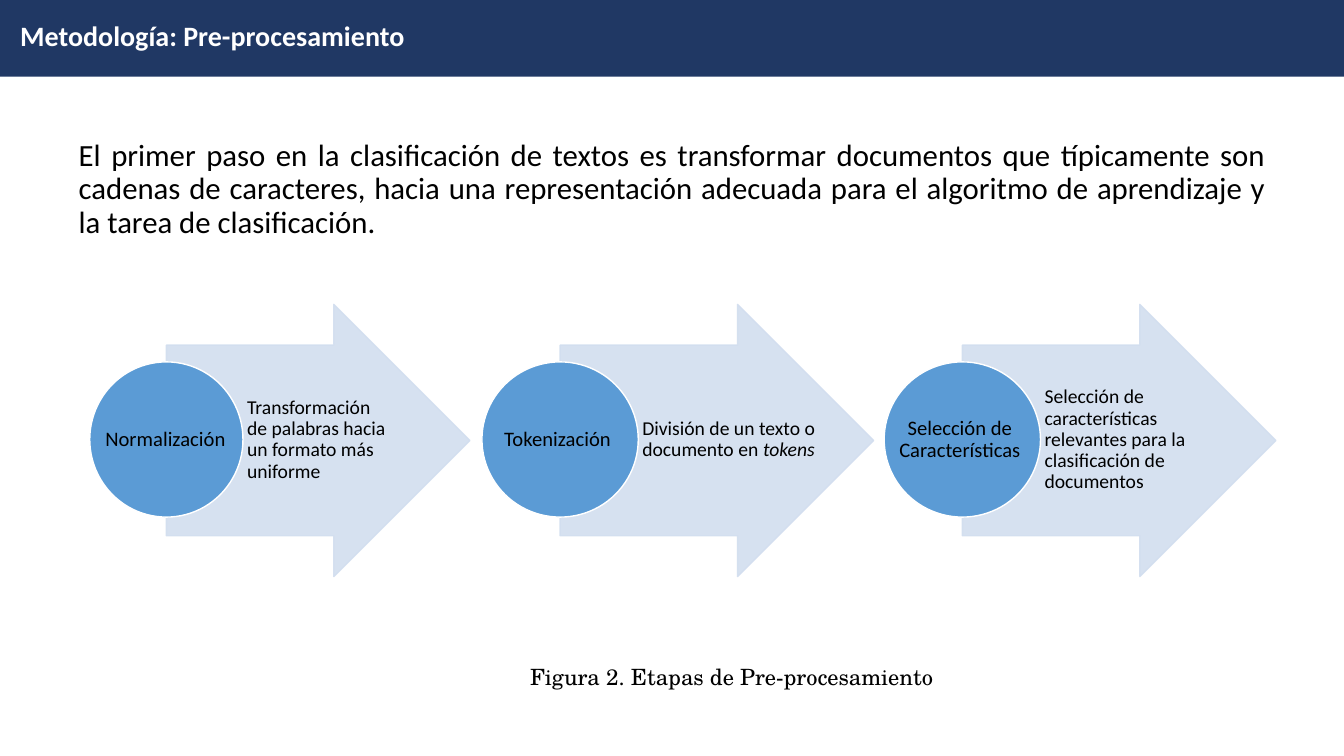
from dataclasses import dataclass

from lxml.etree import SubElement
from pptx import Presentation
from pptx.dml.color import RGBColor
from pptx.enum.shapes import MSO_SHAPE
from pptx.enum.text import MSO_ANCHOR, MSO_AUTO_SIZE, PP_ALIGN
from pptx.oxml.ns import qn
from pptx.util import Inches, Pt


@dataclass(frozen=True)
class Theme:
    navy: str = "203864"
    blue: str = "5B9BD5"
    pale: str = "D2DEEF"
    white: str = "FFFFFF"
    black: str = "000000"
    sans: str = "Calibri"
    serif: str = "TeX Gyre Schola"
    title: float = 20
    body: float = 22
    stage: float = 14.7
    detail: float = 14
    caption: float = 16
    opacity: int = 90


class SlideBuilder:
    def __init__(self, deck, theme):
        self.theme = theme
        self.column = deck.slide_width / 100
        self.row = deck.slide_height / 100
        self.slide = deck.slides.add_slide(deck.slide_layouts[1])

    def box(self, left, top, width, height):
        return (round(left * self.column), round(top * self.row),
                round(width * self.column), round(height * self.row))

    def place(self, holder, area):
        holder.left, holder.top, holder.width, holder.height = self.box(*area)

    def set_text(self, holder, runs, size, color=None, font=None, bold=False,
                 align=PP_ALIGN.LEFT, anchor=MSO_ANCHOR.TOP, spacing=1.0,
                 before=0, indent=0, insets=(0.1, 0.05, 0.1, 0.05)):
        frame = holder.text_frame
        frame.word_wrap = True
        frame.auto_size = MSO_AUTO_SIZE.NONE
        frame.vertical_anchor = anchor
        (frame.margin_left, frame.margin_top,
         frame.margin_right, frame.margin_bottom) = map(Inches, insets)
        paragraph = frame.paragraphs[0]
        paragraph.alignment = align
        paragraph.line_spacing = spacing
        paragraph.space_before = Pt(before)
        properties = paragraph._p.get_or_add_pPr()
        properties.set("marL", str(Inches(indent)))
        properties.set("indent", "0")
        SubElement(properties, qn("a:buNone"))
        for words, italic in runs:
            run = paragraph.add_run()
            run.text = words
            run.font.size = Pt(size)
            run.font.name = font or self.theme.sans
            run.font.bold = bold
            run.font.italic = italic
            run.font.color.rgb = RGBColor.from_string(color or self.theme.black)

    def title(self, area, words):
        heading = self.slide.shapes.title
        self.place(heading, area)
        self.set_text(heading, [(words, False)], self.theme.title,
                      color=self.theme.white, bold=True)

    def body(self, area, words):
        introduction = self.slide.placeholders[1]
        self.place(introduction, area)
        self.set_text(introduction, [(words, False)], self.theme.body,
                      align=PP_ALIGN.JUSTIFY, spacing=0.9, before=5)

    def text(self, area, runs, size, **style):
        label = self.slide.shapes.add_textbox(*self.box(*area))
        self.set_text(label, runs, size, **style)

    def shape(self, preset, area, fill, outline=None):
        figure = self.slide.shapes.add_shape(preset, *self.box(*area))
        figure.shadow.inherit = False
        figure.fill.solid()
        figure.fill.fore_color.rgb = RGBColor.from_string(fill)
        if outline:
            figure.line.color.rgb = RGBColor.from_string(outline)
            figure.line.width = Pt(1)
        else:
            figure.line.fill.background()
        return figure

    def banner(self, area):
        band = self.shape(MSO_SHAPE.RECTANGLE, area, self.theme.navy)
        self.slide.shapes._spTree.insert(2, band._element)

    def arrow(self, area):
        arrow = self.shape(MSO_SHAPE.RIGHT_ARROW, area,
                           self.theme.pale, self.theme.pale)
        arrow.adjustments[0] = 0.7
        arrow.adjustments[1] = 0.5
        for color in arrow._element.spPr.iter(qn("a:srgbClr")):
            SubElement(color, qn("a:alpha"), val=str(self.theme.opacity * 1000))

    def stage(self, left, diameter, reach, detail_width, name, detail):
        self.arrow((left + diameter / 2, 40.27, reach, 36))
        self.text((left + diameter, 45.6, detail_width, 25.2), detail,
                  self.theme.detail, anchor=MSO_ANCHOR.MIDDLE, spacing=0.9,
                  insets=(0.04, 0.01, 0.02, 0.01))
        self.shape(MSO_SHAPE.OVAL, (left, 47.87, diameter, 20.53),
                   self.theme.blue, self.theme.white)
        self.text((left + 0.83, 50.93, 9.6, 14.53), [(name, False)],
                  self.theme.stage, align=PP_ALIGN.CENTER,
                  anchor=MSO_ANCHOR.MIDDLE, spacing=0.9, insets=(0.01,) * 4)

    def caption(self, area, words):
        self.text(area, [(words, False)], self.theme.caption,
                  font=self.theme.serif, align=PP_ALIGN.JUSTIFY,
                  spacing=1.5, indent=0.67)


STAGES = [
    (6.68, 11.4, 22.58, 11.03, "Normalización",
     [("Transformación de palabras hacia un formato más uniforme", False)]),
    (35.86, 11.63, 23.33, 15.3, "Tokenización",
     [("División de un texto o documento en ", False), ("tokens", True)]),
    (65.79, 11.63, 23.33, 15.3, "Selección de Características",
     [("Selección de características relevantes para la clasificación "
       "de documentos", False)]),
]


def main():
    deck = Presentation()
    deck.slide_width, deck.slide_height = Inches(13.33), Inches(7.5)
    builder = SlideBuilder(deck, Theme())
    builder.banner((0, 0, 100, 10.13))
    builder.title((0.75, 1.73, 97.3, 5.87), "Metodología: Pre-procesamiento")
    builder.body((5.1, 17.87, 89.8, 75.2),
                 "El primer paso en la clasificación de textos es transformar "
                 "documentos que típicamente son cadenas de caracteres, hacia "
                 "una representación adecuada para el algoritmo de aprendizaje "
                 "y la tarea de clasificación.")
    for stage in STAGES:
        builder.stage(*stage)
    builder.caption((33.68, 85.33, 40.74, 6.67),
                    "Figura 2. Etapas de Pre-procesamiento")
    deck.save("out.pptx")


if __name__ == "__main__":
    main()
